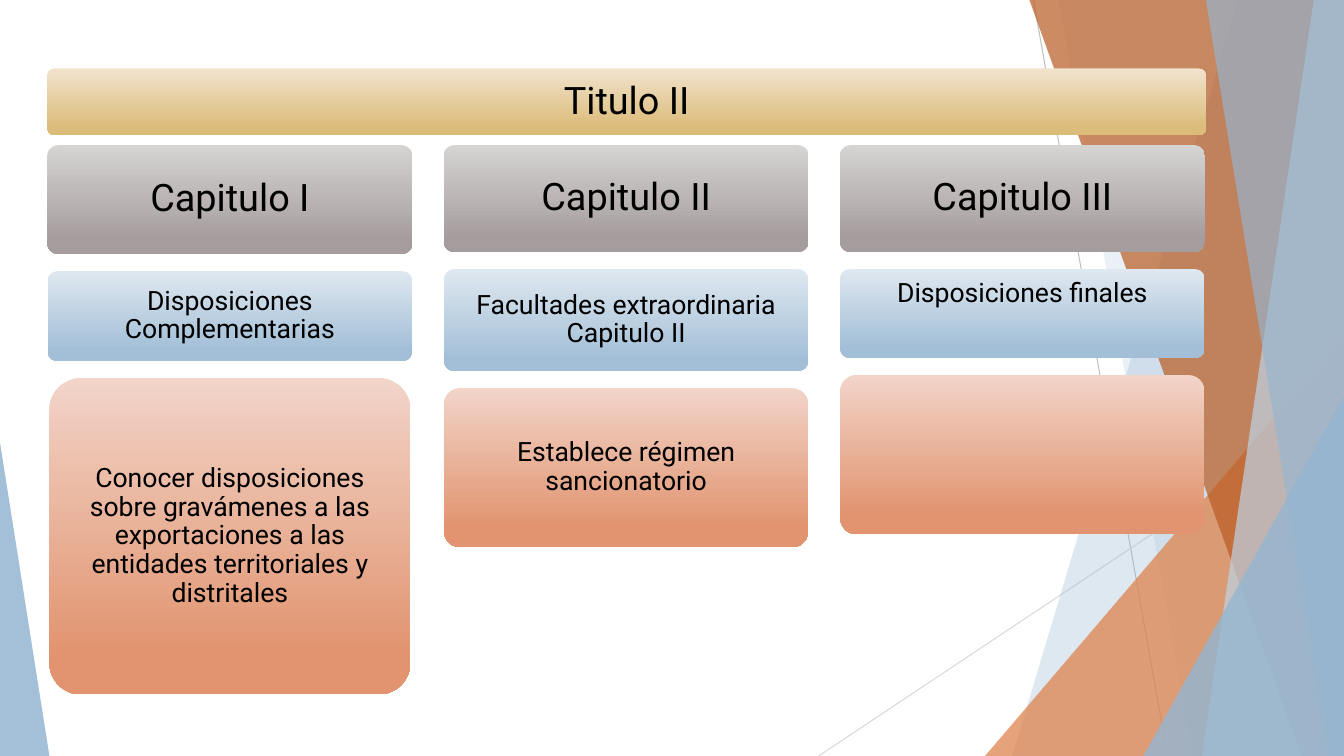
from dataclasses import dataclass
from lxml.etree import SubElement
from pptx import Presentation
from pptx.dml.color import RGBColor
from pptx.enum.shapes import MSO_CONNECTOR as Connector, MSO_SHAPE as Preset
from pptx.enum.text import MSO_ANCHOR as Anchor, PP_ALIGN as Align
from pptx.oxml.ns import qn
from pptx.util import Inches, Pt


@dataclass(frozen=True)
class Theme:
    font: str = "Roboto"
    text: str = "000000"
    heading_size: int = 27
    body_size: int = 19
    line_spacing: float = 0.9
    gold: tuple = ("F0E3CD", "DCBC7B")
    gray: tuple = ("D6D3D3", "A59D9D")
    sky: tuple = ("DFE8F0", "A3BFD7")
    salmon: tuple = ("F2D4C9", "E1946F")
    blue: str = "94B6D2"
    pale_blue: str = "BFD3E4"
    orange: str = "DD8047"
    rust: str = "B95B22"


theme = Theme()
WIDTH, HEIGHT = 13.33, 7.5

TITLE = "Titulo II"
TITLE_BAR = (0.47, 0.68, 11.49, 0.66)

COLUMNS = [
    [("Capitulo I", 3.62, 1.08),
     ("Disposiciones Complementarias", 3.61, 0.89),
     ("Conocer disposiciones sobre gravámenes a las exportaciones a las "
      "entidades territoriales y distritales", 3.58, 3.14)],
    [("Capitulo II", 3.62, 1.06),
     ("Facultades extraordinaria Capitulo II", 3.61, 1.01),
     ("Establece régimen sancionatorio", 3.61, 1.58)],
    [("Capitulo III", 3.62, 1.06),
     ("Disposiciones finales", 3.61, 0.88),
     ("", 3.61, 1.58)],
]
LEVELS = [
    (theme.gray, theme.heading_size, 0.11),
    (theme.sky, theme.body_size, 0.08),
    (theme.salmon, theme.body_size, 0.08),
]
TOP_ALIGNED = {"Disposiciones finales"}
COLUMN_LEFT, COLUMN_TOP, COLUMN_WIDTH = 0.47, 1.44, 3.62
COLUMN_PITCH, CARD_GAP = 3.93, 0.17

THIN_LINES = [
    ((10.25, 0), (11.58, HEIGHT), "BFBFBF"),
    ((WIDTH, 4.03), (8.12, HEIGHT), "D9D9D9"),
]
BACKDROP = [
    ("band", (12.28, 10.04), theme.blue, 30),
    ("band", (10.5, 11.83), theme.blue, 20),
    ("triangle", (9.77, 3.33, 3.56, 4.17, 1), theme.orange, 72),
    ("band", (10.21, 12.91), theme.rust, 70),
    ("band", (13.03, 11.92), theme.pale_blue, 70),
    ("band", (11.96, 13.18), theme.blue, 65),
    ("triangle", (11.34, 3.93, 1.99, 3.57, 1), theme.blue, 80),
    ("triangle", (0, 4.39, 0.49, 3.11, 0), theme.blue, 85),
]


def color(value):
    return RGBColor.from_string(value)


def add_thin_line(slide, start, end, line_color):
    line = slide.shapes.add_connector(
        Connector.STRAIGHT, *(Inches(value) for value in start + end))
    line.line.color.rgb = color(line_color)
    line.line.width = Pt(0.75)
    SubElement(line._element.spPr, qn("a:effectLst"))


def add_band(slide, top_x, bottom_x):
    builder = slide.shapes.build_freeform(Inches(top_x), 0)
    corners = [(WIDTH, 0), (WIDTH, HEIGHT), (bottom_x, HEIGHT)]
    builder.add_line_segments([(Inches(x), Inches(y)) for x, y in corners])
    return builder.convert_to_shape()


def add_triangle(slide, left, top, width, height, apex):
    shape = slide.shapes.add_shape(
        Preset.ISOSCELES_TRIANGLE,
        *(Inches(value) for value in (left, top, width, height)))
    shape.adjustments[0] = apex
    return shape


def add_backdrop(slide):
    for start, end, line_color in THIN_LINES:
        add_thin_line(slide, start, end, line_color)
    builders = {"band": add_band, "triangle": add_triangle}
    for kind, geometry, fill_color, opacity in BACKDROP:
        shape = builders[kind](slide, *geometry)
        shape.shadow.inherit = False
        shape.line.fill.background()
        shape.fill.solid()
        shape.fill.fore_color.rgb = color(fill_color)
        fill = shape._element.spPr.find(qn("a:solidFill"))
        SubElement(fill[0], qn("a:alpha"), val=str(opacity * 1000))


def add_card(slide, box, gradient):
    card = slide.shapes.add_shape(
        Preset.ROUNDED_RECTANGLE, *(Inches(value) for value in box))
    card.adjustments[0] = 0.1
    card.shadow.inherit = False
    card.line.fill.background()
    card.fill.gradient()
    card.fill.gradient_angle = 270
    for stop, stop_color, position in zip(
            card.fill.gradient_stops, gradient, (0, 0.88)):
        stop.color.rgb = color(stop_color)
        stop.position = position
    return card


def set_text(shape, text, size, inset, anchor=Anchor.MIDDLE):
    frame = shape.text_frame
    frame.word_wrap = True
    frame.vertical_anchor = anchor
    frame.margin_left = frame.margin_right = Inches(inset)
    frame.margin_top = frame.margin_bottom = Inches(inset)
    frame.text = text
    paragraph = frame.paragraphs[0]
    paragraph.alignment = Align.CENTER
    paragraph.line_spacing = theme.line_spacing
    paragraph.font.name = theme.font
    paragraph.font.size = Pt(size)
    paragraph.font.color.rgb = color(theme.text)


def add_title(slide):
    add_card(slide, TITLE_BAR, theme.gold)
    title = slide.shapes.title
    title.left, title.top, title.width, title.height = (
        Inches(value) for value in TITLE_BAR)
    set_text(title, TITLE, theme.heading_size, 0.11)
    slide.shapes._spTree.append(title._element)


def add_columns(slide):
    for index, cards in enumerate(COLUMNS):
        left = COLUMN_LEFT + index * COLUMN_PITCH
        top = COLUMN_TOP
        for (text, width, height), (gradient, size, inset) in zip(cards, LEVELS):
            card_left = left + (COLUMN_WIDTH - width) / 2
            card = add_card(slide, (card_left, top, width, height), gradient)
            if text:
                anchor = Anchor.TOP if text in TOP_ALIGNED else Anchor.MIDDLE
                set_text(card, text, size, inset, anchor)
            top += height + CARD_GAP


def main():
    presentation = Presentation()
    presentation.slide_width = Inches(WIDTH)
    presentation.slide_height = Inches(HEIGHT)
    slide = presentation.slides.add_slide(presentation.slide_layouts[5])
    add_backdrop(slide)
    add_title(slide)
    add_columns(slide)
    presentation.save("out.pptx")


if __name__ == "__main__":
    main()
